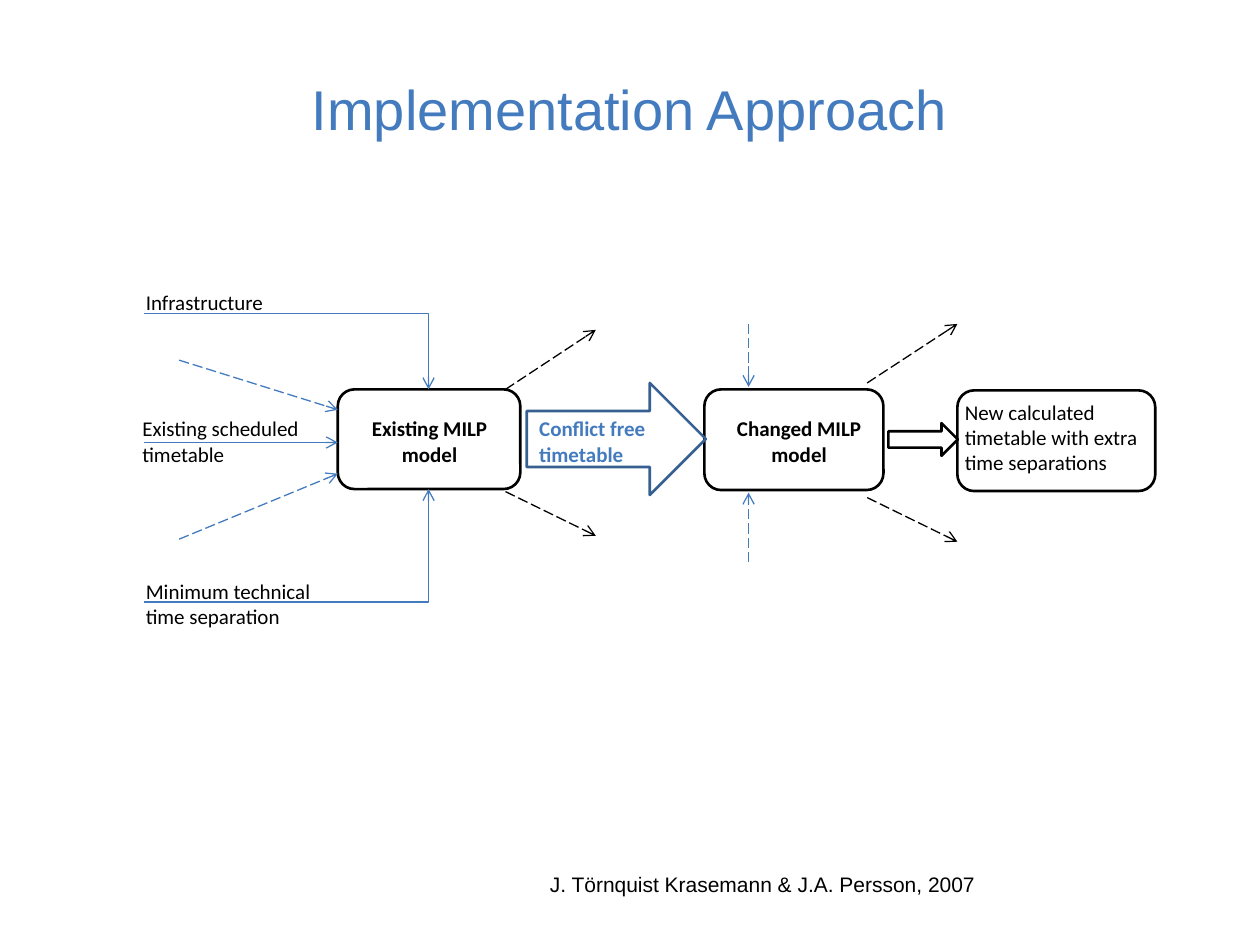
import pptx
import pptx.util
import pptx.dml.color
import pptx.enum.dml
import pptx.enum.shapes
import pptx.enum.text
import pptx.oxml.ns
import pptx.oxml.xmlchemy

Cm = pptx.util.Cm
Pt = pptx.util.Pt
RGBColor = pptx.dml.color.RGBColor
OxmlElement = pptx.oxml.xmlchemy.OxmlElement
qn = pptx.oxml.ns.qn
SHAPE = pptx.enum.shapes.MSO_SHAPE
CONNECTOR = pptx.enum.shapes.MSO_CONNECTOR
ALIGN = pptx.enum.text.PP_ALIGN
ANCHOR = pptx.enum.text.MSO_ANCHOR

COLORS = {"black": "000000", "white": "FFFFFF", "blue": "437BBE", "dark blue": "376092"}


def set_text(shape, text, color, font_format, paragraph_format):
    shape.text_frame.text = text
    shape.text_frame.word_wrap = True
    paragraph = shape.text_frame.paragraphs[0]
    for name, value in paragraph_format.items():
        setattr(paragraph, name, value)
    for name, value in font_format.items():
        setattr(paragraph.font, name, value)
    paragraph.font.color.rgb = RGBColor.from_string(COLORS[color])


def add_arrow(ends, color, dashed=False, kind=CONNECTOR.STRAIGHT):
    connector = slide.shapes.add_connector(kind, *[Cm(value) for value in ends])
    connector.line.width = Pt(0.75)
    connector.line.color.rgb = RGBColor.from_string(COLORS[color])
    if dashed:
        connector.line.dash_style = pptx.enum.dml.MSO_LINE.LONG_DASH
    properties = connector._element.spPr
    if kind == CONNECTOR.ELBOW:
        properties.find(qn("a:prstGeom")).set("prst", "bentConnector2")
    tail = OxmlElement("a:tailEnd")
    tail.set("type", "arrow")
    properties.find(qn("a:ln")).append(tail)
    properties.append(OxmlElement("a:effectLst"))


presentation = pptx.Presentation()
presentation.slide_width = Cm(25.4)
presentation.slide_height = Cm(19.05)
slide = presentation.slides.add_slide(presentation.slide_layouts[5])

# Title
title = slide.shapes.title
title.left, title.top, title.width, title.height = Cm(0.3), Cm(1.32), Cm(24.79), Cm(2.01)
title.text_frame.vertical_anchor = ANCHOR.MIDDLE
title.text_frame.margin_bottom = Cm(0.41)
set_text(title, "Implementation Approach", "blue",
         {"name": "Arial", "size": Pt(32)}, {"alignment": ALIGN.CENTER})

# Model boxes and block arrows
blocks = [
    (SHAPE.ROUNDED_RECTANGLE, (6.81, 7.85, 3.68, 2.01), "white", "black"),
    (SHAPE.ROUNDED_RECTANGLE, (14.2, 7.85, 3.61, 2.03), "white", "black"),
    (SHAPE.RIGHT_ARROW, (10.62, 7.72, 3.61, 2.26), None, "dark blue"),
    (SHAPE.ROUNDED_RECTANGLE, (19.3, 7.87, 3.99, 2.03), None, "black"),
    (SHAPE.RIGHT_ARROW, (17.91, 8.53, 1.4, 0.66), None, "black"),
]
for kind, place, fill, line in blocks:
    shape = slide.shapes.add_shape(kind, *[Cm(value) for value in place])
    shape.shadow.inherit = False
    if fill:
        shape.fill.solid()
        shape.fill.fore_color.rgb = RGBColor.from_string(COLORS[fill])
    else:
        shape.fill.background()
    shape.line.color.rgb = RGBColor.from_string(COLORS[line])
    shape.line.width = Pt(1.5)

# Inputs of the existing model
add_arrow((2.9, 8.92, 6.81, 8.92), "blue")
for ends in [(2.9, 6.32, 8.64, 7.85), (2.9, 12.14, 8.64, 9.86)]:
    add_arrow(ends, "blue", kind=CONNECTOR.ELBOW)

# Other inputs (blue) and outputs (black) of both models
dashed_arrows = {
    "blue": [(3.61, 7.26, 6.81, 8.26), (3.61, 10.87, 6.81, 9.55),
             (15.09, 6.53, 15.09, 7.8), (15.09, 11.33, 15.09, 9.93)],
    "black": [(10.19, 7.85, 12.01, 6.65), (10.19, 9.91, 12.01, 10.8),
              (17.48, 7.72, 19.3, 6.53), (17.48, 10.03, 19.3, 10.92)],
}
for color, arrows in dashed_arrows.items():
    for ends in arrows:
        add_arrow(ends, color, dashed=True)

# Labels: text, place, colour, bold, alignment
labels = [
    ("Infrastructure", (2.69, 5.72, 3.1, 0.79), "black", False, ALIGN.LEFT),
    ("Existing scheduled timetable", (2.62, 8.26, 5.28, 1.27), "black", False, ALIGN.LEFT),
    ("Minimum technical time separation", (2.69, 11.53, 4.29, 1.27), "black", False, ALIGN.LEFT),
    ("Existing MILP model", (7.11, 8.26, 3.1, 1.27), "black", True, ALIGN.CENTER),
    ("Conflict free timetable", (10.62, 8.26, 3.3, 1.27), "blue", True, ALIGN.LEFT),
    ("Changed MILP model", (14.6, 8.26, 3.02, 1.32), "black", True, ALIGN.CENTER),
    ("New calculated timetable with extra time separations", (19.2, 7.92, 4.5, 1.8),
     "black", False, ALIGN.LEFT),
]
for text, place, color, bold, alignment in labels:
    label = slide.shapes.add_textbox(*[Cm(value) for value in place])
    set_text(label, text, color, {"name": "Calibri", "size": Pt(12), "bold": bold},
             {"alignment": alignment})

# Reference
reference = slide.shapes.add_textbox(Cm(10.69), Cm(17.2), Cm(9.37), Cm(1.45))
set_text(reference, "J. Törnquist Krasemann & J.A. Persson, 2007", "black",
         {"name": "Arial", "size": Pt(12)},
         {"alignment": ALIGN.CENTER, "line_spacing": 1.5})

presentation.save("out.pptx")
